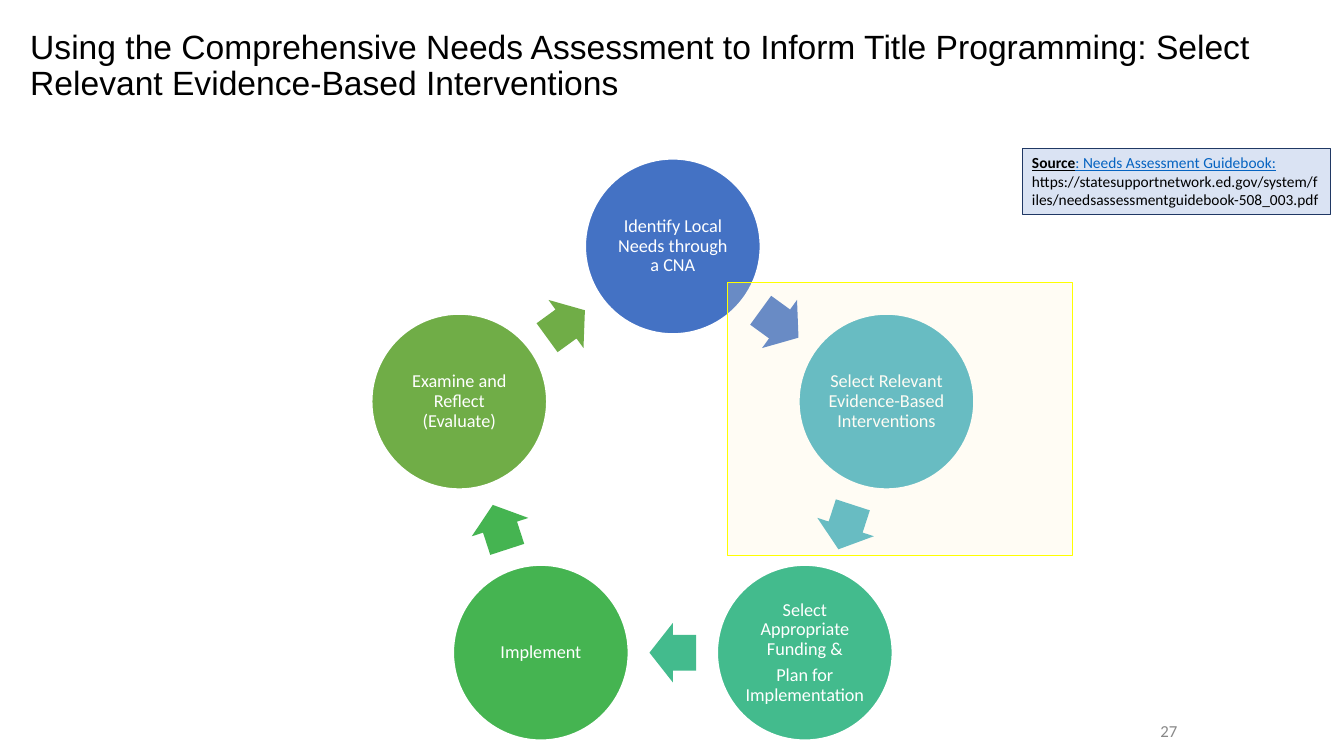
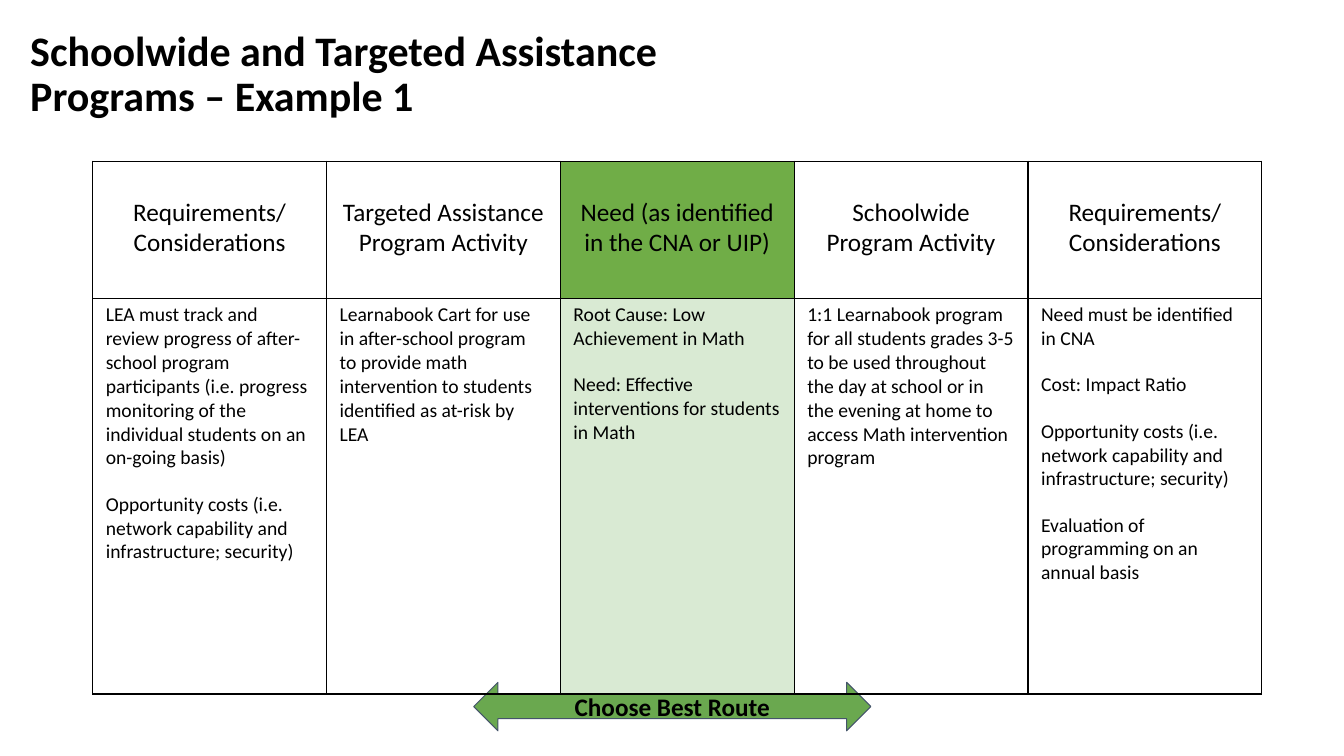
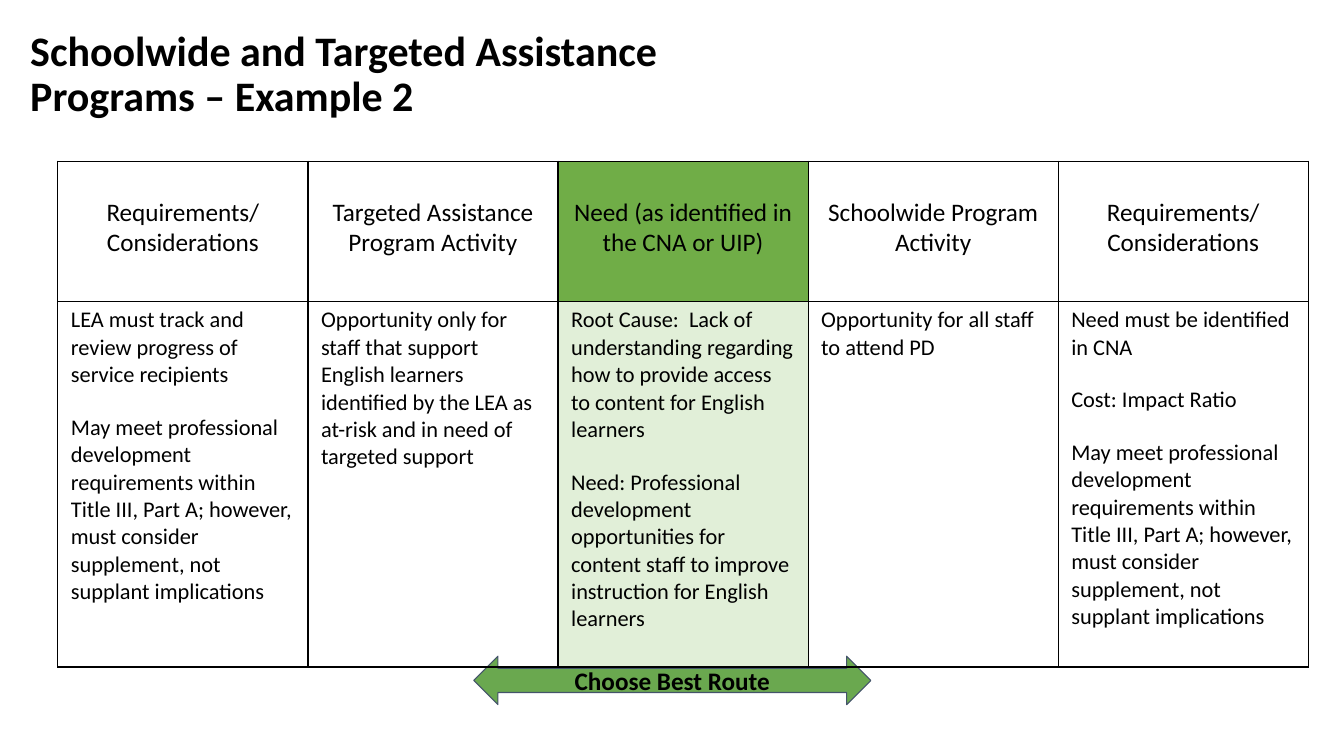
from math import cos, radians, sin

from lxml.etree import SubElement
from pptx import Presentation
from pptx.dml.color import RGBColor
from pptx.enum.shapes import MSO_SHAPE
from pptx.enum.text import MSO_ANCHOR, PP_ALIGN
from pptx.oxml.ns import qn
from pptx.util import Pt

BLACK = RGBColor(0x00, 0x00, 0x00)
WHITE = RGBColor(0xFF, 0xFF, 0xFF)
GRAY = RGBColor(0x88, 0x88, 0x88)
YELLOW = RGBColor(0xFF, 0xFF, 0x00)
CREAM = RGBColor(0xFF, 0xF2, 0xCC)
PALE_BLUE = RGBColor(0xDA, 0xE3, 0xF3)
NAVY = RGBColor(0x20, 0x38, 0x64)
LINK = RGBColor(0x05, 0x63, 0xC1)
SLATE = RGBColor(0x44, 0x54, 0x6A)
BLUE = RGBColor(0x44, 0x72, 0xC4)
TEAL = RGBColor(0x43, 0xAF, 0xC0)
MINT = RGBColor(0x43, 0xBB, 0x8D)
GREEN = RGBColor(0x45, 0xB4, 0x51)
OLIVE = RGBColor(0x70, 0xAD, 0x47)
ROUTE_GREEN = RGBColor(0x6A, 0xA8, 0x4F)
PALE_GREEN = RGBColor(0xD9, 0xEA, 0xD3)
LIGHT_GREEN = RGBColor(0xE1, 0xEF, 0xD8)


class Deck:
    """Shared style and the slide being built; lengths are in points."""

    font = "Calibri"

    def __init__(self):
        self.prs = Presentation()
        self.prs.slide_width, self.prs.slide_height = Pt(960), Pt(540)
        self.s = None

    def slide(self):
        self.s = self.prs.slides.add_slide(self.prs.slide_layouts[6])

    def run(self, p, text, size, color=BLACK, bold=False, underline=False, font=None):
        r = p.add_run()
        r.text = text
        f = r.font
        f.name, f.size, f.bold, f.underline = font or self.font, Pt(size), bold, underline
        f.color.rgb = color

    def paragraphs(self, tf, texts, size, color=BLACK, align=PP_ALIGN.LEFT,
                   gap=0, spacing=1.0, **style):
        for i, text in enumerate(texts):
            p = tf.add_paragraph() if i else tf.paragraphs[0]
            p.alignment, p.line_spacing = align, spacing
            if i:
                p.space_before = Pt(gap)
            self.run(p, text, size, color, **style)

    def frame(self, sp, inset_x, inset_y, anchor):
        tf = sp.text_frame
        tf.word_wrap, tf.vertical_anchor = True, anchor
        tf.margin_left = tf.margin_right = Pt(inset_x)
        tf.margin_top = tf.margin_bottom = Pt(inset_y)
        return tf

    def text(self, x, y, w, h, inset=(0, 0), anchor=MSO_ANCHOR.TOP):
        box = self.s.shapes.add_textbox(Pt(x), Pt(y), Pt(w), Pt(h))
        return self.frame(box, *inset, anchor)

    def title(self, text, width, size, **style):
        self.paragraphs(self.text(21.6, 21.6, width, 56), [text], size, spacing=0.9, **style)

    def shape(self, kind, x, y, w, h, fill, line=None, line_width=0.75, adjust=()):
        sp = self.s.shapes.add_shape(kind, Pt(x), Pt(y), Pt(w), Pt(h))
        sp.shadow.inherit = False
        sp.fill.solid()
        sp.fill.fore_color.rgb = fill
        if line is None:
            sp.line.fill.background()
        else:
            sp.line.color.rgb, sp.line.width = line, Pt(line_width)
        for i, value in enumerate(adjust):
            sp.adjustments[i] = value
        return sp

    def cycle(self, cx, cy, radius, steps):
        d, arrow_w, arrow_h = 126, 33.4, 42.5
        turn = 360 / len(steps)
        mid = radius * cos(radians(turn / 2))

        def point(r, angle):
            return cx + r * sin(radians(angle)), cy - r * cos(radians(angle))

        for i, (texts, color) in enumerate(steps):
            x, y = point(radius, i * turn)
            sp = self.shape(MSO_SHAPE.OVAL, x - d / 2, y - d / 2, d, d, color, WHITE, 2)
            self.paragraphs(self.frame(sp, 1.3, 1.3, MSO_ANCHOR.MIDDLE), texts, 13, WHITE,
                            PP_ALIGN.CENTER, gap=4.5, spacing=0.9)
            x, y = point(mid, (i + 0.5) * turn)
            arrow = self.shape(MSO_SHAPE.RIGHT_ARROW, x - arrow_w / 2, y - arrow_h / 2,
                               arrow_w, arrow_h, color, adjust=(0.6, 0.5))
            arrow.rotation = (i + 0.5) * turn

    def highlight(self, x, y, w, h, opacity):
        sp = self.shape(MSO_SHAPE.RECTANGLE, x, y, w, h, CREAM, YELLOW)
        color = sp.fill._xPr.find(qn("a:solidFill"))[0]
        SubElement(color, qn("a:alpha"), val=str(opacity * 1000))

    def route_arrow(self, y):
        sp = self.shape(MSO_SHAPE.LEFT_RIGHT_ARROW, 338.4, y, 283.7, 34.6,
                        ROUTE_GREEN, SLATE, adjust=(0.5, 0.5))
        self.paragraphs(self.frame(sp, 7.2, 7.2, MSO_ANCHOR.MIDDLE), ["Choose Best Route"],
                        18, align=PP_ALIGN.CENTER, bold=True)

    def cell(self, cell, texts, size, fill, top, **style):
        cell.margin_left = cell.margin_right = Pt(9.4)
        cell.margin_top, cell.margin_bottom = Pt(top), Pt(3.6)
        tcPr = cell._tc.get_or_add_tcPr()
        for side in ("lnL", "lnR", "lnT", "lnB"):
            ln = SubElement(tcPr, qn("a:" + side), w=str(Pt(1)))
            SubElement(SubElement(ln, qn("a:solidFill")), qn("a:srgbClr"), val=str(BLACK))
        if fill is None:
            cell.fill.background()
        else:
            cell.fill.solid()
            cell.fill.fore_color.rgb = fill
        self.paragraphs(cell.text_frame, texts, size, **style)

    def program_table(self, x, col_w, row_heights, size, need_fill, columns):
        n = len(columns)
        table = self.s.shapes.add_table(2, n, Pt(x), Pt(115.2), Pt(col_w * n),
                                        Pt(sum(row_heights))).table
        table.first_row = table.horz_banding = False
        for row, height in zip(table.rows, row_heights):
            row.height = Pt(height)
        for i, (heading, body) in enumerate(zip(HEADINGS, columns)):
            table.columns[i].width = Pt(col_w)
            is_need = i == n // 2
            self.cell(table.cell(0, i), [heading], 18, OLIVE if is_need else None, 25.6,
                      align=PP_ALIGN.CENTER)
            self.cell(table.cell(1, i), body, size, need_fill if is_need else None, 3.6,
                      gap=round(size * 1.15))

    def example(self, number, arrow_y, **table):
        self.slide()
        self.title(f"Schoolwide and Targeted Assistance Programs – Example {number}",
                   458.6, 30, bold=True)
        self.route_arrow(arrow_y)
        self.program_table(**table)


# Wording shared by both example tables
HEADINGS = [
    "Requirements/ Considerations",
    "Targeted Assistance Program Activity",
    "Need (as identified in the CNA or UIP)",
    "Schoolwide Program Activity",
    "Requirements/ Considerations",
]
IN_CNA = "Need must be identified in CNA"
COST = "Cost: Impact Ratio"
OPPORTUNITY = "Opportunity costs (i.e. network capability and infrastructure; security)"
TITLE_III = ("May meet professional development requirements within Title III, Part A; "
             "however, must consider supplement, not supplant implications")


def main():
    deck = Deck()

    # Needs assessment cycle
    deck.slide()
    deck.title("Using the Comprehensive Needs Assessment to Inform Title Programming: "
               "Select Relevant Evidence-Based Interventions", 876.2, 24, font="Arial")
    number = deck.text(678.2, 514.8, 169.9, 14.4, (7.2, 3.6), MSO_ANCHOR.MIDDLE)
    deck.paragraphs(number, ["27"], 12, GRAY, PP_ALIGN.RIGHT)
    deck.cycle(480.6, 336.4, 160.4, [
        (["Identify Local Needs through a CNA"], BLUE),
        (["Select Relevant Evidence-Based Interventions"], TEAL),
        (["Select Appropriate Funding &", "Plan for Implementation"], MINT),
        (["Implement"], GREEN),
        (["Examine and Reflect (Evaluate)"], OLIVE),
    ])
    deck.highlight(519.6, 201.7, 246.8, 195, opacity=20)

    # Source note
    note = deck.shape(MSO_SHAPE.RECTANGLE, 730.1, 106, 220.3, 47.3, PALE_BLUE, NAVY)
    p = deck.frame(note, 7.2, 3.6, MSO_ANCHOR.TOP).paragraphs[0]
    p.alignment = PP_ALIGN.LEFT
    deck.run(p, "Source", 11, bold=True, underline=True)
    deck.run(p, ": Needs Assessment Guidebook: ", 11, LINK, underline=True)
    deck.run(p, "https://statesupportnetwork.ed.gov/system/files/"
                "needsassessmentguidebook-508_003.pdf", 11)

    # Example 1
    deck.example(1, 487.4, x=66.2, col_w=167.04, row_heights=(97.8, 282.7), size=14,
                 need_fill=PALE_GREEN, columns=[
        ["LEA must track and review progress of after-school program participants "
         "(i.e. progress monitoring of the individual students on an on-going basis)",
         OPPORTUNITY],
        ["Learnabook Cart for use in after-school program to provide math intervention "
         "to students identified as at-risk by LEA"],
        ["Root Cause: Low Achievement in Math",
         "Need: Effective interventions for students in Math"],
        ["1:1 Learnabook program for all students grades 3-5 to be used throughout the "
         "day at school or in the evening at home to access Math intervention program"],
        [IN_CNA, COST, OPPORTUNITY, "Evaluation of programming on an annual basis"],
    ])

    # Example 2
    deck.example(2, 468.7, x=41.3, col_w=178.66, row_heights=(100.2, 261), size=16,
                 need_fill=LIGHT_GREEN, columns=[
        ["LEA must track and review progress of service recipients", TITLE_III],
        ["Opportunity only for staff that support English learners identified by the LEA "
         "as at-risk and in need of targeted support"],
        ["Root Cause:  Lack of understanding regarding how to provide access to content "
         "for English learners",
         "Need: Professional development opportunities for content staff to improve "
         "instruction for English learners"],
        ["Opportunity for all staff to attend PD"],
        [IN_CNA, COST, TITLE_III],
    ])

    deck.prs.save("out.pptx")


if __name__ == "__main__":
    main()
